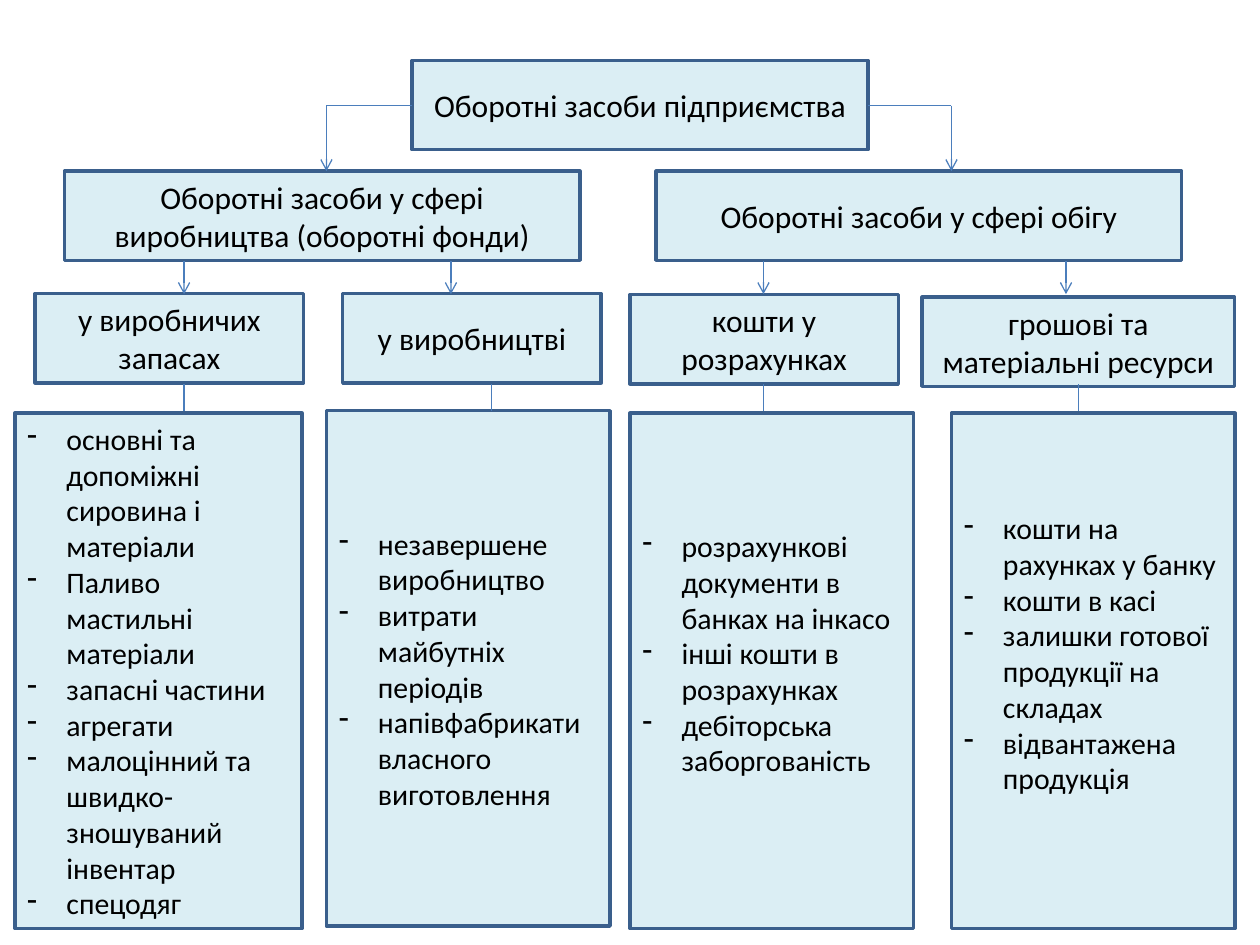
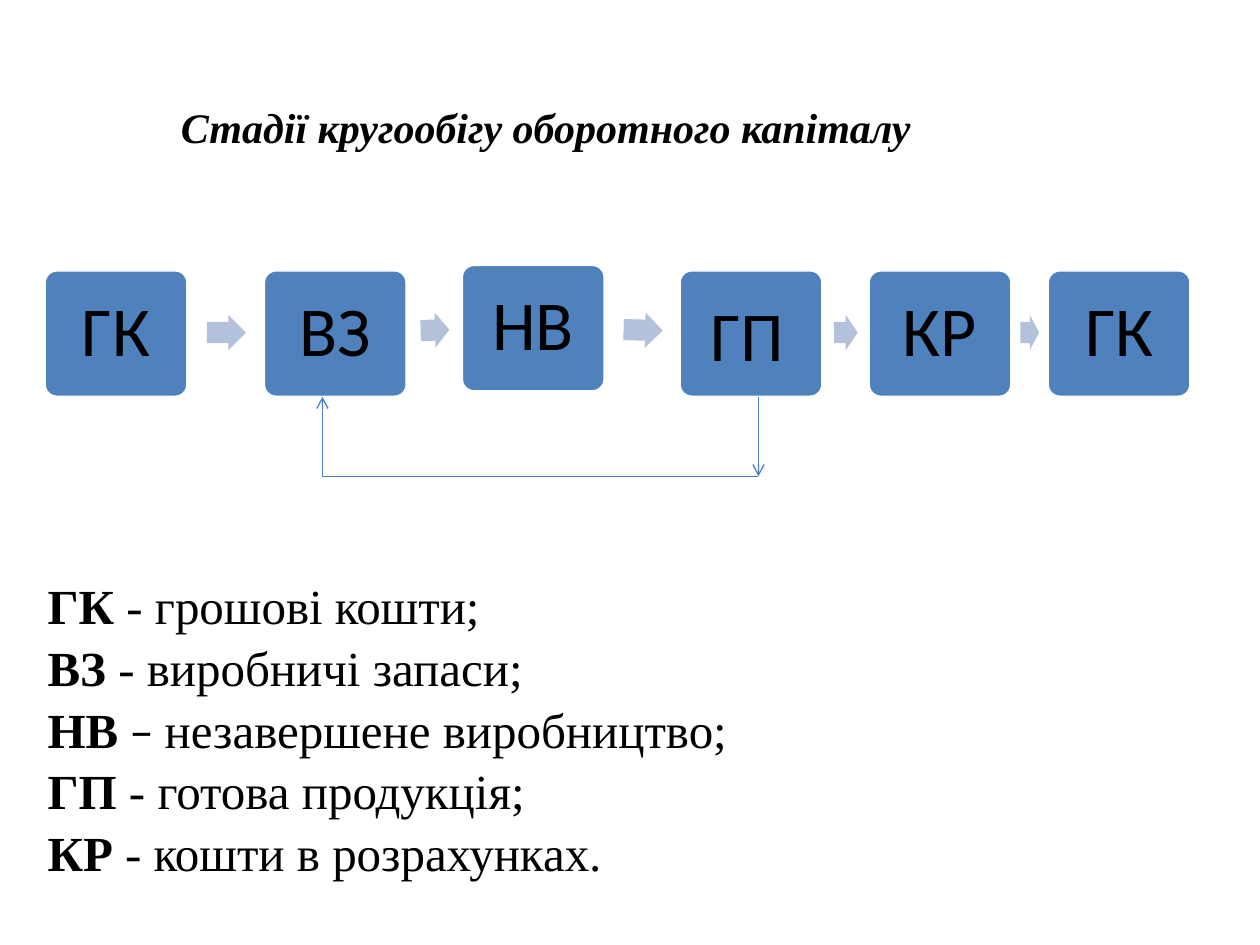
from lxml import etree
from pptx import Presentation
from pptx.dml.color import RGBColor
from pptx.enum.shapes import MSO_CONNECTOR, MSO_SHAPE
from pptx.enum.text import MSO_ANCHOR, MSO_AUTO_SIZE, PP_ALIGN
from pptx.oxml.ns import qn
from pptx.util import Cm, Pt

RECTANGLE = MSO_SHAPE.RECTANGLE
ROUNDED = MSO_SHAPE.ROUNDED_RECTANGLE
ARROW = MSO_SHAPE.RIGHT_ARROW
STRAIGHT = MSO_CONNECTOR.STRAIGHT
MIDDLE = MSO_ANCHOR.MIDDLE
BOTTOM = MSO_ANCHOR.BOTTOM
NO_AUTOFIT = MSO_AUTO_SIZE.NONE
LEFT = PP_ALIGN.LEFT
CENTER = PP_ALIGN.CENTER
JUSTIFY = PP_ALIGN.JUSTIFY

BLACK = RGBColor(0x00, 0x00, 0x00)
WHITE = RGBColor(0xFF, 0xFF, 0xFF)
PALE_BLUE = RGBColor(0xDB, 0xEE, 0xF4)
DARK_BLUE = RGBColor(0x3A, 0x5F, 0x8C)
LINE_BLUE = RGBColor(0x4B, 0x7E, 0xBC)
STAGE_BLUE = RGBColor(0x4F, 0x81, 0xBD)
ARROW_BLUE = RGBColor(0xB3, 0xC1, 0xDB)
SANS = "Calibri"
SERIF = "Times New Roman"


def add_box(slide, kind, frame, fill, outline=None, text="", size=18, align=CENTER):
    box = slide.shapes.add_shape(kind, *(Cm(value) for value in frame))
    box.shadow.inherit = False
    box.fill.solid()
    box.fill.fore_color.rgb = fill
    if outline is None:
        box.line.fill.background()
    else:
        box.line.color.rgb = outline
        box.line.width = Pt(2)
    box.text_frame.word_wrap = True
    box.text_frame.vertical_anchor = MIDDLE
    box.text_frame.text = text
    for para in box.text_frame.paragraphs:
        para.alignment = align
        para.font.size = Pt(size)
        for span in para.runs:
            span.font.size = Pt(size)
            span.font.name = SANS
            span.font.color.rgb = BLACK
    return box


def add_line(slide, start_x, start_y, end_x, end_y, arrow=False):
    line = slide.shapes.add_connector(
        STRAIGHT, Cm(start_x), Cm(start_y), Cm(end_x), Cm(end_y))
    line.line.color.rgb = LINE_BLUE
    line.line.width = Pt(0.75)
    if arrow:
        etree.SubElement(line.line._get_or_add_ln(), qn("a:tailEnd"), type="arrow")
    etree.SubElement(line._element.spPr, qn("a:effectLst"))


deck = Presentation()
deck.slide_width = Cm(25.4)
deck.slide_height = Cm(19.05)

structure = deck.slides.add_slide(deck.slide_layouts[6])

HEADING_HEIGHT = 1.8
headings = [
    (8.31, 1.22, 9.19, "Оборотні засоби підприємства"),
    (1.3, 3.45, 10.39, "Оборотні засоби у сфері виробництва (оборотні фонди)"),
    (13.23, 3.45, 10.59, "Оборотні засоби у сфері обігу"),
    (0.71, 5.92, 5.41, "у виробничих запасах"),
    (6.91, 5.92, 5.21, "у виробництві"),
    (12.7, 5.94, 5.41, "кошти у розрахунках"),
    (18.59, 5.99, 6.3, "грошові та матеріальні ресурси"),
]
for left, top, width, text in headings:
    add_box(structure, RECTANGLE, (left, top, width, HEADING_HEIGHT),
            PALE_BLUE, DARK_BLUE, text)

LIST_HEIGHT = 10.39
LIST_INDENT = Cm(0.79)
lists = [
    (0.3, 8.33, 5.79, 0.13, [
        "основні та допоміжні сировина і матеріали",
        "Паливо мастильні матеріали",
        "запасні частини",
        "агрегати",
        "малоцінний та швидко-зношуваний інвентар",
        "спецодяг",
    ]),
    (6.58, 8.28, 5.72, 0.13, [
        "незавершене виробництво",
        "витрати майбутніх періодів",
        "напівфабрикати власного виготовлення",
    ]),
    (12.7, 8.33, 5.72, 0.85, [
        "розрахункові документи в банках на інкасо",
        "інші кошти в розрахунках",
        "дебіторська заборгованість",
    ]),
    (19.18, 8.33, 5.72, 0.85, [
        "кошти на рахунках у банку",
        "кошти в касі",
        "залишки готової продукції на складах",
        "відвантажена продукція",
    ]),
]
for left, top, width, bottom_margin, items in lists:
    box = add_box(structure, RECTANGLE, (left, top, width, LIST_HEIGHT),
                  PALE_BLUE, DARK_BLUE, "\n".join(items), 17, LEFT)
    box.text_frame.margin_bottom = Cm(bottom_margin)
    for para in box.text_frame.paragraphs:
        properties = para._p.get_or_add_pPr()
        properties.set("marL", str(LIST_INDENT))
        properties.set("indent", str(-LIST_INDENT))
        bullet = etree.Element(qn("a:buChar"), char="-")
        default_run = properties.find(qn("a:defRPr"))
        default_run.addprevious(bullet)

for edge_x, branch_x in [(17.5, 19.18), (8.31, 6.58)]:
    add_line(structure, edge_x, 2.13, branch_x, 2.13)
    add_line(structure, branch_x, 2.13, branch_x, 3.45, arrow=True)
for arrow_x in [21.49, 15.39, 9.09, 3.71]:
    add_line(structure, arrow_x, 5.26, arrow_x, 5.93, arrow=True)
for stem_x in [21.74, 15.39, 9.91, 3.71]:
    add_line(structure, stem_x, 7.75, stem_x, 8.28)

cycle = deck.slides.add_slide(deck.slide_layouts[5])

title = cycle.shapes.title
title.left, title.top, title.width, title.height = Cm(1.38), Cm(1.12), Cm(19.25), Cm(2.06)
title.text_frame.text = "Стадії кругообігу оборотного капіталу"
title.text_frame.auto_size = NO_AUTOFIT
title.text_frame.vertical_anchor = BOTTOM
para = title.text_frame.paragraphs[0]
para.alignment = CENTER
font = para.runs[0].font
font.name = SERIF
font.size = Pt(24)
font.bold = True
font.italic = True
font.color.rgb = BLACK

stages = [
    (0.89, 5.44, "ГК"),
    (5.31, 5.44, "ВЗ"),
    (9.3, 5.33, "НВ"),
    (13.69, 5.44, "ГП"),
    (17.5, 5.44, "КР"),
    (21.11, 5.44, "ГК"),
]
for left, top, label in stages:
    stage = add_box(cycle, ROUNDED, (left, top, 2.9, 2.57),
                    STAGE_BLUE, WHITE, label, 40)
    stage.adjustments[0] = 0.1
    frame = stage.text_frame
    frame.margin_left = frame.margin_right = frame.margin_top = frame.margin_bottom = 0
    frame.paragraphs[0].line_spacing = 0.9
    if label == "ГП":
        frame.margin_top = Cm(0.2)
        frame.margin_right = Cm(0.16)

step_arrows = [
    (4.17, 6.35, 0.79, 0),
    (8.48, 6.3, 0.58, 358.5),
    (12.57, 6.3, 0.79, 1.4),
    (16.81, 6.35, 0.48, 0),
    (20.57, 6.35, 0.38, 0),
]
for left, top, width, rotation in step_arrows:
    arrow = add_box(cycle, ARROW, (left, top, width, 0.71), ARROW_BLUE)
    arrow.adjustments[0] = 0.6
    arrow.adjustments[1] = 0.5
    arrow.rotation = rotation

add_line(cycle, 15.29, 8, 15.29, 9.6, arrow=True)
add_line(cycle, 15.29, 9.6, 6.5, 9.6)
add_line(cycle, 6.5, 9.6, 6.5, 8, arrow=True)

legend = [
    ("ГК", " - ", "грошові кошти;"),
    ("ВЗ", " - ", "виробничі запаси;"),
    ("НВ", " – ", "незавершене виробництво;"),
    ("ГП", " - ", "готова продукція;"),
    ("КР", " - ", "кошти в розрахунках."),
]
box = cycle.shapes.add_textbox(Cm(0.71), Cm(11.53), Cm(14.3), Cm(6.25))
box.text_frame.word_wrap = True
box.text_frame.vertical_anchor = MIDDLE
box.text_frame.text = "\n".join(code for code, dash, meaning in legend)
for para, (code, dash, meaning) in zip(box.text_frame.paragraphs, legend):
    para.alignment = JUSTIFY
    para.line_spacing = 1.05
    para.add_run().text = dash
    para.add_run().text = meaning
    for span in para.runs:
        span.font.name = SANS if span.text == " – " else SERIF
        span.font.size = Pt(28)
        span.font.bold = span.text == code
        span.font.color.rgb = BLACK

deck.save("out.pptx")
